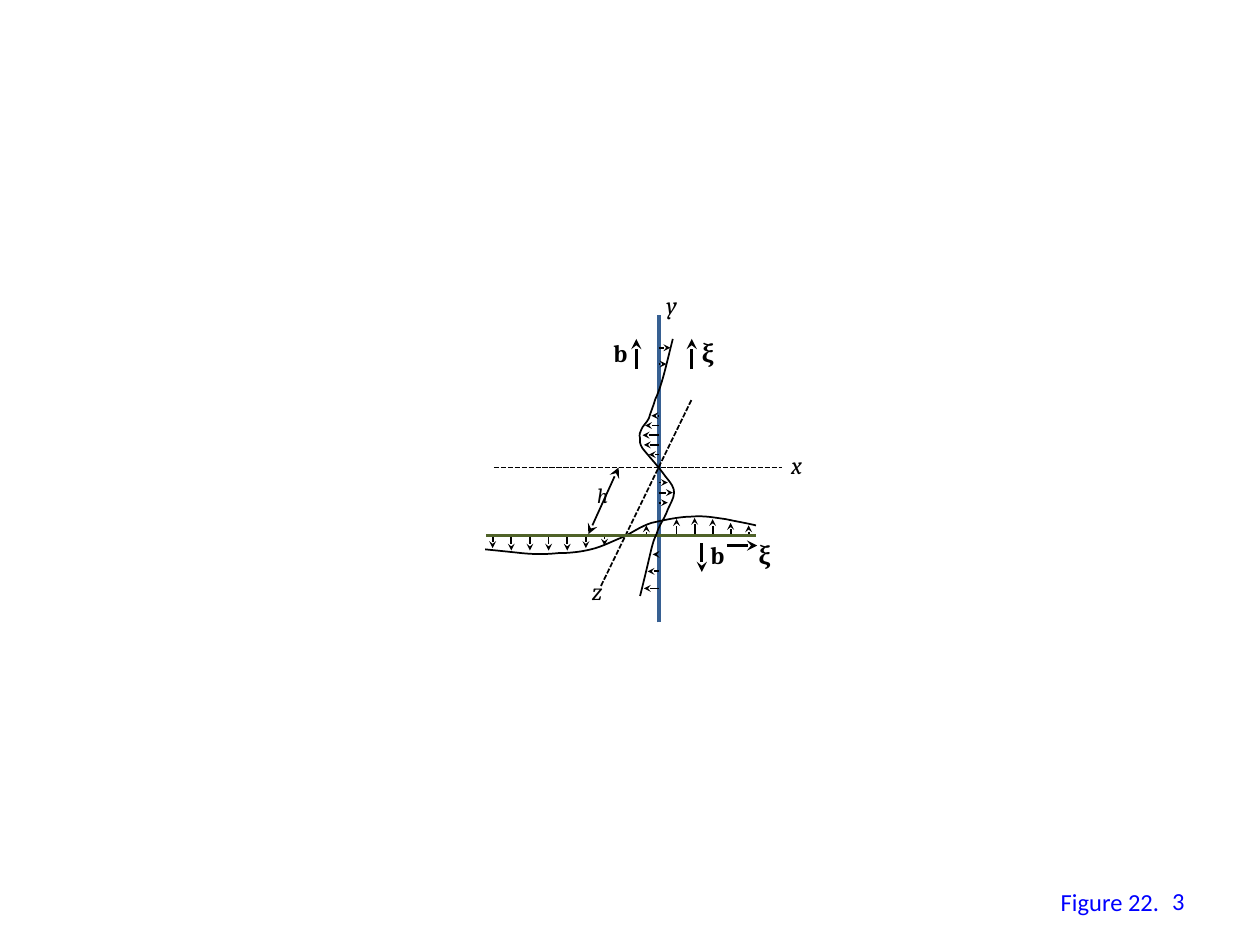
from lxml import etree
from pptx import Presentation
from pptx.dml.color import RGBColor
from pptx.enum.dml import MSO_LINE
from pptx.enum.shapes import MSO_CONNECTOR
from pptx.enum.text import MSO_ANCHOR, MSO_AUTO_SIZE, PP_ALIGN
from pptx.oxml.ns import qn
from pptx.util import Inches, Pt

BLACK, BLUE, GREEN, CAPTION = "000000", "376092", "4F6228", "0000FF"
FIELD_Y = 0.54  # green field line, below the x axis

# Curves: a start point, then two control points and an end point per segment
HORIZONTAL_WAVE = [
    (0.77, 0.46),
    (0.69, 0.44), (0.62, 0.43), (0.53, 0.41),
    (0.45, 0.40), (0.36, 0.38), (0.26, 0.39),
    (0.16, 0.39), (0.03, 0.42), (-0.06, 0.44),
    (-0.15, 0.47), (-0.20, 0.51), (-0.28, 0.55),
    (-0.36, 0.58), (-0.45, 0.63), (-0.54, 0.65),
    (-0.62, 0.67), (-0.71, 0.68), (-0.80, 0.68),
    (-0.90, 0.69), (-0.99, 0.69), (-1.09, 0.68),
    (-1.18, 0.67), (-1.38, 0.65), (-1.38, 0.65),
]
VERTICAL_WAVE = [
    (0.11, -1.02),
    (0.09, -0.94), (0.07, -0.86), (0.05, -0.78),
    (0.03, -0.70), (0, -0.60), (-0.03, -0.54),
    (-0.05, -0.47), (-0.07, -0.43), (-0.08, -0.39),
    (-0.10, -0.35), (-0.13, -0.33), (-0.14, -0.30),
    (-0.15, -0.28), (-0.16, -0.26), (-0.15, -0.23),
    (-0.15, -0.21), (-0.16, -0.20), (-0.13, -0.15),
    (-0.09, -0.10), (0.01, 0.01), (0.05, 0.07),
    (0.10, 0.13), (0.12, 0.16), (0.12, 0.20),
    (0.12, 0.25), (0.08, 0.30), (0.06, 0.36),
    (0.04, 0.41), (0, 0.46), (-0.02, 0.53),
    (-0.05, 0.59), (-0.06, 0.65), (-0.08, 0.73),
    (-0.10, 0.82), (-0.15, 1.02), (-0.15, 1.02),
]

# Displacement arrows: first position, spacing, signed lengths
HORIZONTAL_ARROWS = [
    (-1.32, 0.148, [0.10, 0.12, 0.12, 0.12, 0.12, 0.10, 0.08]),
    (-0.10, 0, [-0.08]),
    (0.14, 0.143, [-0.13, -0.14, -0.13, -0.10, -0.08]),
]
VERTICAL_ARROWS = [
    (-0.95, 0.13, [0.09, 0.06]),
    (-0.41, 0.077, [-0.06, -0.11, -0.13, -0.12, -0.08]),
    (0.12, 0.08, [0.07, 0.11, 0.07]),
    (0.69, 0.135, [-0.05, -0.09, -0.12]),
]


def color(value):
    return RGBColor.from_string(value)


def add_line(slide, origin, start, end, line_color=BLACK, width=1,
             dashed=False, arrows=(), arrow_size="med"):
    (x, y), (start_x, start_y), (end_x, end_y) = origin, start, end
    connector = slide.shapes.add_connector(
        MSO_CONNECTOR.STRAIGHT,
        Inches(x + start_x), Inches(y + start_y),
        Inches(x + end_x), Inches(y + end_y))
    connector.line.color.rgb = color(line_color)
    connector.line.width = Pt(width)
    if dashed:
        connector.line.dash_style = MSO_LINE.SQUARE_DOT
    properties = connector.line._get_or_add_ln()
    for arrow in arrows:
        etree.SubElement(properties, qn("a:" + arrow), type="stealth",
                         w=arrow_size, len=arrow_size)
    etree.SubElement(connector._element.spPr, qn("a:effectLst"))


def add_curve(slide, origin, points):
    """Draw joined cubic curves as one open outline."""
    placed = [(Inches(origin[0] + x), Inches(origin[1] + y)) for x, y in points]
    builder = slide.shapes.build_freeform(*placed[0])
    builder.add_line_segments(placed[1:], close=False)
    shape = builder.convert_to_shape()
    # Turn every three straight steps into one cubic segment
    steps = list(shape._element.iter(qn("a:lnTo")))
    for first in range(0, len(steps), 3):
        segment = etree.Element(qn("a:cubicBezTo"))
        steps[first].addprevious(segment)
        for step in steps[first:first + 3]:
            segment.append(step[0])
            step.getparent().remove(step)
    shape.fill.background()
    shape.line.color.rgb = color(BLACK)
    shape.line.width = Pt(1)
    shape.shadow.inherit = False


def add_text(slide, box, text, font_name, size=14, font_color=BLACK,
             bold=False, italic=False, wrap=False):
    shape = slide.shapes.add_textbox(*(Inches(length) for length in box))
    frame = shape.text_frame
    frame.text = text
    frame.word_wrap = wrap
    frame.auto_size = MSO_AUTO_SIZE.NONE if wrap else MSO_AUTO_SIZE.SHAPE_TO_FIT_TEXT
    font = frame.paragraphs[0].runs[0].font
    font.name, font.size = font_name, Pt(size)
    font.bold, font.italic = bold, italic
    font.color.rgb = color(font_color)
    return frame


def add_diagram(slide, left, top):
    origin = (left + 1.38, top + 1.46)  # where the axes cross

    # Blue field line and dashed axes
    add_line(slide, origin, (0, 1.23), (0, -1.21), BLUE, 2.25)
    add_line(slide, origin, (-1.31, 0), (0.98, 0), dashed=True)
    add_line(slide, origin, (-0.46, 0.94), (0.26, -0.54), dashed=True)

    # Wave along the green field line
    add_curve(slide, origin, HORIZONTAL_WAVE)
    for first, spacing, lengths in HORIZONTAL_ARROWS:
        for index, length in enumerate(lengths):
            x = first + index * spacing
            add_line(slide, origin, (x, FIELD_Y), (x, FIELD_Y + length),
                     arrows=["tailEnd"], arrow_size="sm")
    add_line(slide, origin, (-1.37, FIELD_Y), (0.77, FIELD_Y), GREEN, 2.25)

    # Wave along the blue field line
    for first, spacing, lengths in VERTICAL_ARROWS:
        for index, length in enumerate(lengths):
            y = first + index * spacing
            add_line(slide, origin, (0, y), (length, y),
                     arrows=["tailEnd"], arrow_size="sm")
    add_curve(slide, origin, VERTICAL_WAVE)

    # Distance between the field lines
    add_line(slide, origin, (-0.56, 0.53), (-0.32, 0),
             arrows=["headEnd", "tailEnd"])

    # Direction arrows of b and ξ
    for start, end in [((-0.18, -0.78), (-0.18, -1.02)),
                       ((0.26, -0.78), (0.26, -1.02)),
                       ((0.34, 0.60), (0.34, 0.83)),
                       ((0.54, 0.62), (0.78, 0.62))]:
        add_line(slide, origin, start, end, width=1.5, arrows=["tailEnd"])

    # Labels: scalars in italics, vectors in bold
    for text, x, y, width, height, size in [("x", 0.95, -0.19, 0.34, 0.34, 14),
                                            ("y", -0.04, -1.46, 0.34, 0.34, 14),
                                            ("z", -0.63, 0.81, 0.33, 0.34, 14),
                                            ("h", -0.59, 0.07, 0.33, 0.30, 12)]:
        add_text(slide, (origin[0] + x, origin[1] + y, width, height),
                 text, "Cambria", size, italic=True)
    for text, x, y, width in [("b", -0.46, -1.08, 0.31), ("b", 0.31, 0.53, 0.31),
                              ("ξ", 0.24, -1.08, 0.30), ("ξ", 0.69, 0.53, 0.30)]:
        add_text(slide, (origin[0] + x, origin[1] + y, width, 0.34),
                 text, "Cambria", bold=True)


def add_caption(slide, left, top):
    add_text(slide, (left + 1.15, top + 0.04, 0.99, 0.34), "Figure 22.",
             "Calibri", font_color=CAPTION)
    number = add_text(slide, (left, top, 2.33, 0.4), "3", "Calibri",
                      font_color=CAPTION, wrap=True)
    number.vertical_anchor = MSO_ANCHOR.MIDDLE
    number.paragraphs[0].alignment = PP_ALIGN.RIGHT


def main():
    presentation = Presentation()
    presentation.slide_width, presentation.slide_height = Inches(10), Inches(7.5)
    slide = presentation.slides.add_slide(presentation.slide_layouts[6])
    add_diagram(slide, 3.85, 2.25)
    add_caption(slide, 7.17, 6.95)
    presentation.save("out.pptx")


if __name__ == "__main__":
    main()
